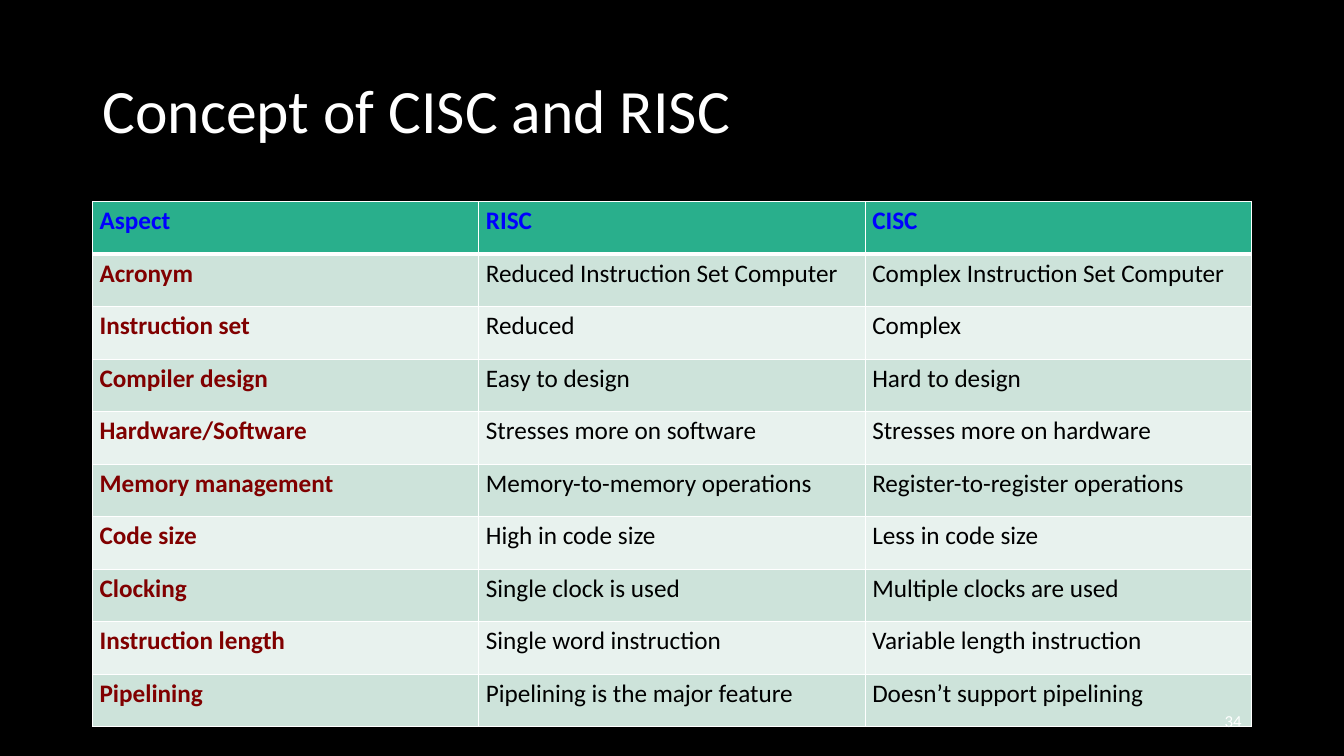
from dataclasses import dataclass

from lxml import etree
from pptx import Presentation
from pptx.dml.color import RGBColor
from pptx.enum import text as t
from pptx.oxml import ns
from pptx.util import Cm, Pt

BLACK = RGBColor(0x00, 0x00, 0x00)
WHITE = RGBColor(0xFF, 0xFF, 0xFF)
BLUE = RGBColor(0x00, 0x00, 0xFF)
MAROON = RGBColor(0x80, 0x00, 0x00)
GREEN = RGBColor(0x29, 0xAF, 0x8C)
BAND_DARK = RGBColor(0xCD, 0xE3, 0xDA)
BAND_LIGHT = RGBColor(0xE8, 0xF2, 0xEE)

FONT = "Calibri"
LEFT, WIDTH = Cm(2.33), Cm(29.21)
TABLE_TOP, TABLE_HEIGHT = Cm(5.08), Cm(13.23)


@dataclass(frozen=True)
class Comparison:
    aspect: str
    risc: str
    cisc: str

    def texts(self) -> tuple[str, str, str]:
        return self.aspect, self.risc, self.cisc


COMPARISONS = [
    Comparison("Aspect", "RISC", "CISC"),
    Comparison("Acronym", "Reduced Instruction Set Computer", "Complex Instruction Set Computer"),
    Comparison("Instruction set", "Reduced", "Complex"),
    Comparison("Compiler design", "Easy to design", "Hard to design"),
    Comparison("Hardware/Software", "Stresses more on software", "Stresses more on hardware"),
    Comparison("Memory management", "Memory-to-memory operations", "Register-to-register operations"),
    Comparison("Code size", "High in code size", "Less in code size"),
    Comparison("Clocking", "Single clock is used", "Multiple clocks are used"),
    Comparison("Instruction length", "Single word instruction", "Variable length instruction"),
    Comparison("Pipelining", "Pipelining is the major feature", "Doesn’t support pipelining"),
]


def add_run(p, words: str, size: int, color: RGBColor, bold: bool = False) -> None:
    r = p.add_run()
    r.text = words
    r.font.name = FONT
    r.font.size = Pt(size)
    r.font.bold = bold
    r.font.color.rgb = color


def set_borders(cell, top: int, bottom: int) -> None:
    """Give a cell white borders; must run before its fill is set."""
    props = cell._tc.get_or_add_tcPr()
    for side, width in (("lnL", 1), ("lnR", 1), ("lnT", top), ("lnB", bottom)):
        line = etree.SubElement(props, ns.qn(f"a:{side}"), w=str(Pt(width)))
        fill = etree.SubElement(line, ns.qn("a:solidFill"))
        etree.SubElement(fill, ns.qn("a:srgbClr"), val=str(WHITE))


def add_title(s, words: str) -> None:
    title = s.shapes.title
    title.left, title.top, title.width, title.height = LEFT, Cm(1.02), WIDTH, Cm(3.68)
    tf = title.text_frame
    tf.auto_size = t.MSO_AUTO_SIZE.NONE
    tf.vertical_anchor = t.MSO_ANCHOR.MIDDLE
    p = tf.paragraphs[0]
    p.alignment = t.PP_ALIGN.LEFT
    p.line_spacing = 0.9
    add_run(p, words, 44, WHITE)


def add_comparison_table(s, comparisons: list[Comparison]) -> None:
    count = len(comparisons)
    table = s.shapes.add_table(count, 3, LEFT, TABLE_TOP, WIDTH, TABLE_HEIGHT).table
    for i, comparison in enumerate(comparisons):
        table.rows[i].height = TABLE_HEIGHT // count
        header = i == 0
        band = GREEN if header else BAND_DARK if i % 2 else BAND_LIGHT
        for j, words in enumerate(comparison.texts()):
            cell = table.cell(i, j)
            cell.margin_left = cell.margin_right = Cm(0.18)
            cell.margin_top = cell.margin_bottom = Cm(0.1)
            set_borders(cell, top=3 if i == 1 else 1, bottom=3 if header else 1)
            cell.fill.solid()
            cell.fill.fore_color.rgb = band
            color = BLUE if header else MAROON if j == 0 else BLACK
            add_run(cell.text_frame.paragraphs[0], words, 18, color, header or j == 0)


def add_slide_number(s, number: str) -> None:
    sp = s.shapes.add_textbox(Cm(23.92), Cm(17.65), Cm(7.62), Cm(1.01))
    tf = sp.text_frame
    tf.word_wrap = True
    tf.vertical_anchor = t.MSO_ANCHOR.MIDDLE
    p = tf.paragraphs[0]
    p.alignment = t.PP_ALIGN.RIGHT
    add_run(p, number, 12, WHITE)


def main() -> None:
    prs = Presentation()
    prs.slide_width, prs.slide_height = Cm(33.87), Cm(19.05)
    s = prs.slides.add_slide(prs.slide_layouts.get_by_name("Title Only"))
    s.background.fill.solid()
    s.background.fill.fore_color.rgb = BLACK
    add_title(s, "Concept of CISC and RISC")
    add_comparison_table(s, COMPARISONS)
    add_slide_number(s, "34")
    prs.save("out.pptx")


if __name__ == "__main__":
    main()
